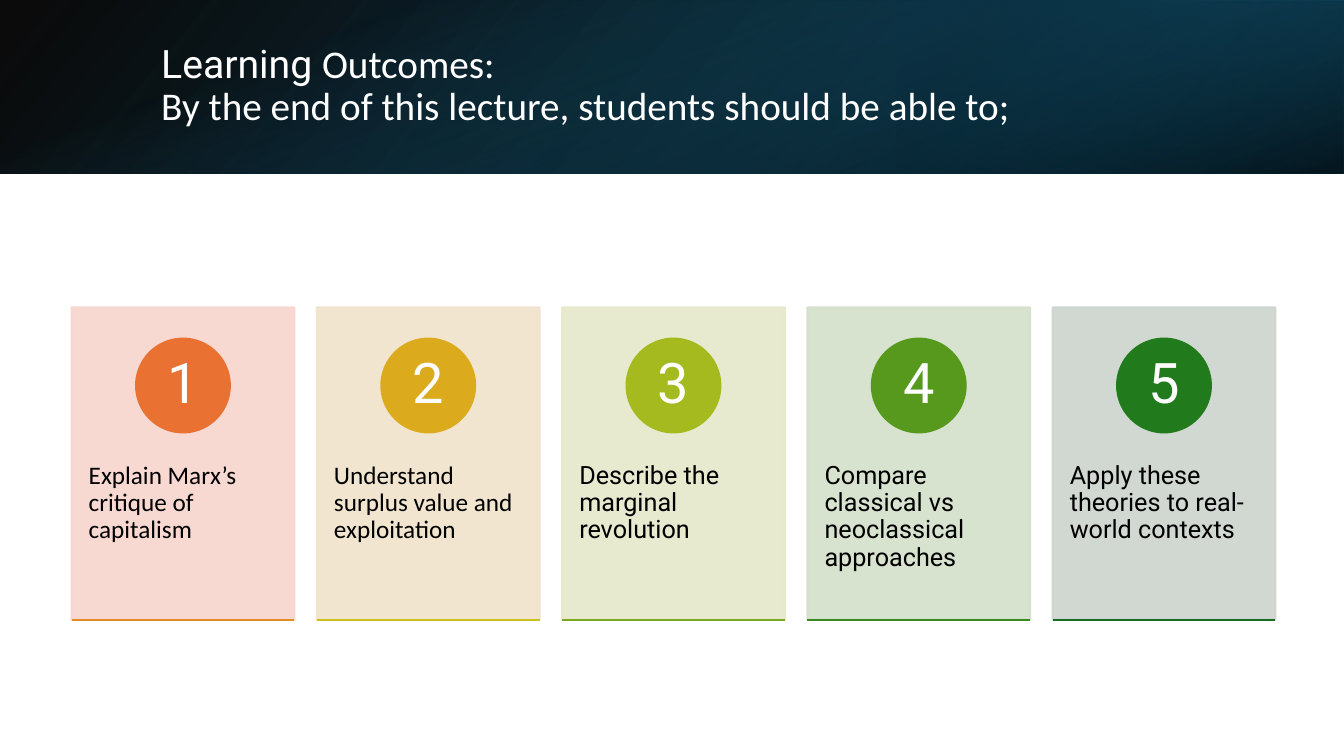
from pptx import Presentation
from pptx import oxml
from pptx.dml.color import RGBColor
from pptx.enum import shapes, text
from pptx.oxml import ns
from pptx.util import Inches, Pt

INK = {
    "white": "FFFFFF", "black": "000000",
    "navy": "104862", "deep": "0B3041", "teal": "156082",
}

# panel, disc and rule colours, text font, wording
CARDS = [
    ("F7D5CE", "E97132", "E58D25", "Calibri", "Explain Marx’s critique of capitalism"),
    ("F0E3CB", "DCAB1D", "CBC11E", "Calibri", "Understand surplus value and exploitation"),
    ("E5E8CA", "A4BA1E", "7AAA1E", "Roboto", "Describe the marginal revolution"),
    ("D3DFCA", "56991D", "398A1C", "Roboto", "Compare classical vs neoclassical approaches"),
    ("CCD4CD", "217A1B", "196B24", "Roboto", "Apply these theories to real-world contexts"),
]

# box, rotation, flip, angle, stops of (position, colour, opacity)
LAYERS = [
    ((0, 0, 13.33, 1.72), 0, True, 140,
     [(0, "black", 96), (100, "navy", 100)]),
    ((8.89, 0, 4.44, 1.72), 180, True, 320,
     [(19, "deep", 68), (100, "teal", 79)]),
    ((5.8, -5.8, 1.72, 13.33), 90, False, 340,
     [(23, "teal", 0), (99, "black", 74)]),
]


def rgb(hue):
    return RGBColor.from_string(hue)


def place(box):
    return [Inches(n) for n in box]


def put(obj, fmt):
    """Set each named attribute of an object."""
    for key, val in fmt.items():
        setattr(obj, key, val)


def fade(fill, hue, pct):
    """Fill with one colour at the given opacity."""
    fill.solid()
    fill.fore_color.rgb = rgb(hue)
    if pct < 100:
        tint = fill._xPr.find(".//" + ns.qn("a:srgbClr"))
        tint.append(oxml.parse_xml(
            f'<a:alpha {ns.nsdecls("a")} val="{pct * 1000}"/>'))


def draw(slide, kind, box, hue, pct=100):
    shape = slide.shapes.add_shape(kind, *place(box))
    shape.shadow.inherit = False
    fade(shape.fill, hue, pct)
    fade(shape.line.fill, hue, pct)
    shape.line.width = Pt(1.5)


def write(slide, box, runs, size, hue, pads, anchor, align):
    """Add a text box whose runs are (wording, font), None for a line break."""
    frame = slide.shapes.add_textbox(*place(box)).text_frame
    side, top = place(pads)
    put(frame, {
        "word_wrap": True, "vertical_anchor": anchor,
        "margin_left": side, "margin_right": side,
        "margin_top": top, "margin_bottom": top,
    })
    para = frame.paragraphs[0]
    put(para, {"line_spacing": 0.9, "alignment": align})
    for item in runs:
        if item is None:
            para.add_line_break()
            continue
        run = para.add_run()
        run.text, face = item
        put(run.font, {"size": Pt(size), "name": face})
        run.font.color.rgb = rgb(hue)


def blend(slide, box, turn, flip, angle, stops):
    """Add a borderless rectangle with a see-through gradient."""
    shape = slide.shapes.add_shape(shapes.MSO_SHAPE.RECTANGLE, *place(box))
    shape.shadow.inherit = False
    shape.rotation = turn
    shape.line.fill.background()
    props = shape._element.spPr
    if flip:
        props.xfrm.set("flipH", "1")
    marks = "".join(
        f'<a:gs pos="{pos * 1000}"><a:srgbClr val="{INK[hue]}">'
        f'<a:alpha val="{pct * 1000}"/></a:srgbClr></a:gs>'
        for pos, hue, pct in stops)
    props.insert(2, oxml.parse_xml(
        f'<a:gradFill {ns.nsdecls("a")} rotWithShape="1"><a:gsLst>{marks}</a:gsLst>'
        f'<a:lin ang="{angle * 60000}" scaled="0"/></a:gradFill>'))


def banner(slide, box):
    for layer in LAYERS:
        blend(slide, *layer)
    left, top, wide, high = box
    runs = [
        ("Learning ", "Roboto"), ("Outcomes: ", "Calibri"), None,
        ("By the end of this lecture, students should be able to;", "Calibri"),
    ]
    write(slide, (left + 1.5, top + 0.38, wide - 2.35, high - 0.76), runs, 28,
          INK["white"], (0.1, 0.05), text.MSO_ANCHOR.MIDDLE, text.PP_ALIGN.LEFT)


def card(slide, box, num, tone, disc, rule, face, words):
    left, top, wide, high = box
    kind = shapes.MSO_SHAPE
    draw(slide, kind.RECTANGLE, box, tone, 90)
    write(slide, (left, top + 1.18, wide, 1.86), [(words, face)], 18,
          INK["black"], (0.17, 0.36), text.MSO_ANCHOR.TOP, text.PP_ALIGN.LEFT)

    size, inner = 0.93, 0.66
    mid, gap = left + wide / 2, (size - inner) / 2
    draw(slide, kind.OVAL, (mid - size / 2, top + 0.31, size, size), disc)
    write(slide, (mid - inner / 2, top + 0.31 + gap, inner, inner),
          [(str(num), "Roboto")], 40, INK["white"], (0.07, 0.01),
          text.MSO_ANCHOR.MIDDLE, text.PP_ALIGN.CENTER)

    base = top + high
    line = slide.shapes.add_connector(
        shapes.MSO_CONNECTOR.STRAIGHT, *place((left, base, left + wide, base)))
    line.line.width = Pt(1.5)
    line.line.color.rgb = rgb(rule)
    line._element.spPr.append(
        oxml.parse_xml(f'<a:effectLst {ns.nsdecls("a")}/>'))


def row(slide, box):
    """Spread the cards evenly across the box."""
    left, top, wide, high = box
    width = 2.21
    step = (wide - width) / (len(CARDS) - 1)
    for i, parts in enumerate(CARDS):
        card(slide, (left + i * step, top, width, high), i + 1, *parts)


def main():
    deck = Presentation()
    put(deck, {"slide_width": Inches(13.33), "slide_height": Inches(7.5)})
    slide = deck.slides.add_slide(deck.slide_layouts[6])
    banner(slide, (0, 0, 13.33, 1.72))
    row(slide, (0.71, 3.05, 11.94, 3.1))
    deck.save("out.pptx")


if __name__ == "__main__":
    main()
